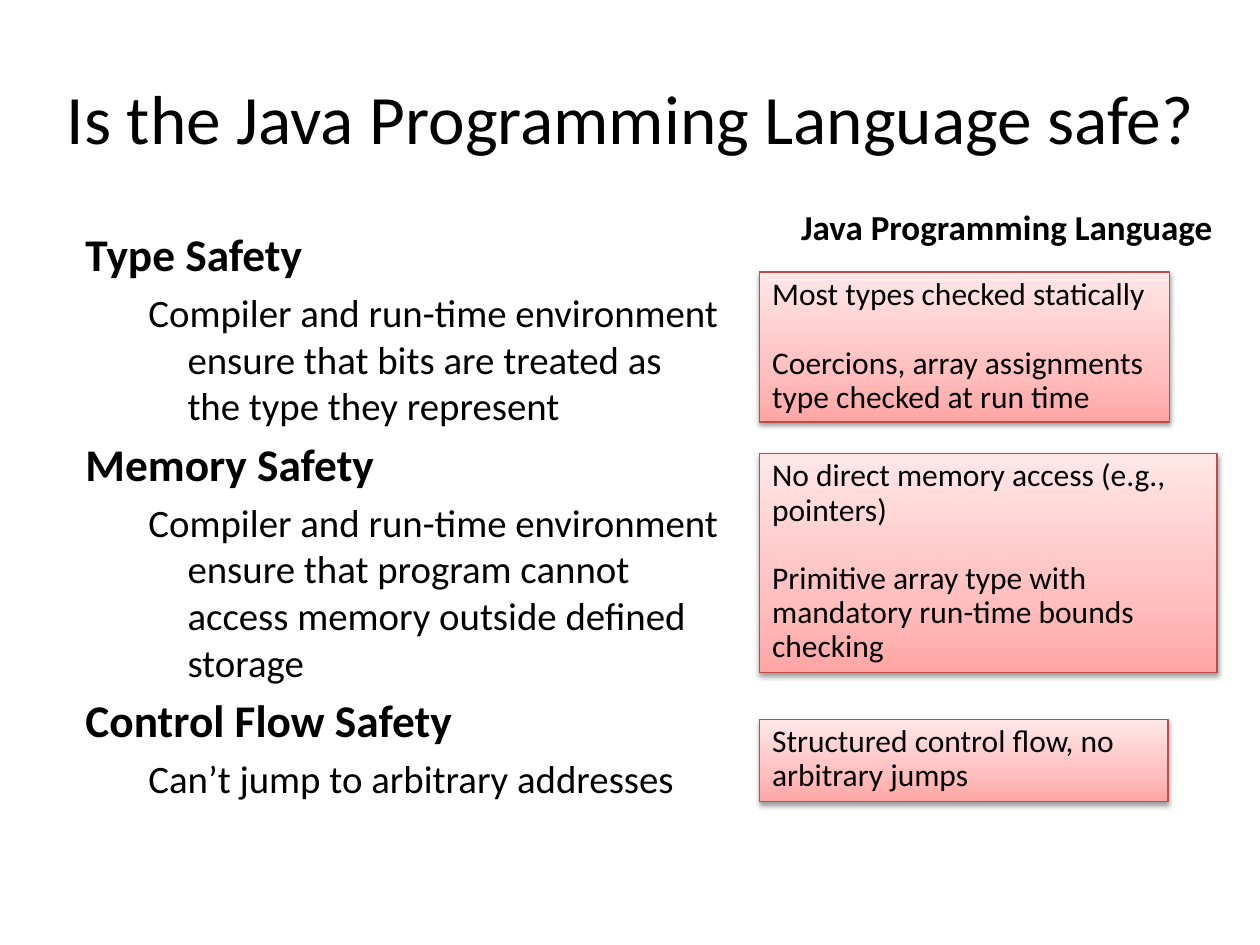
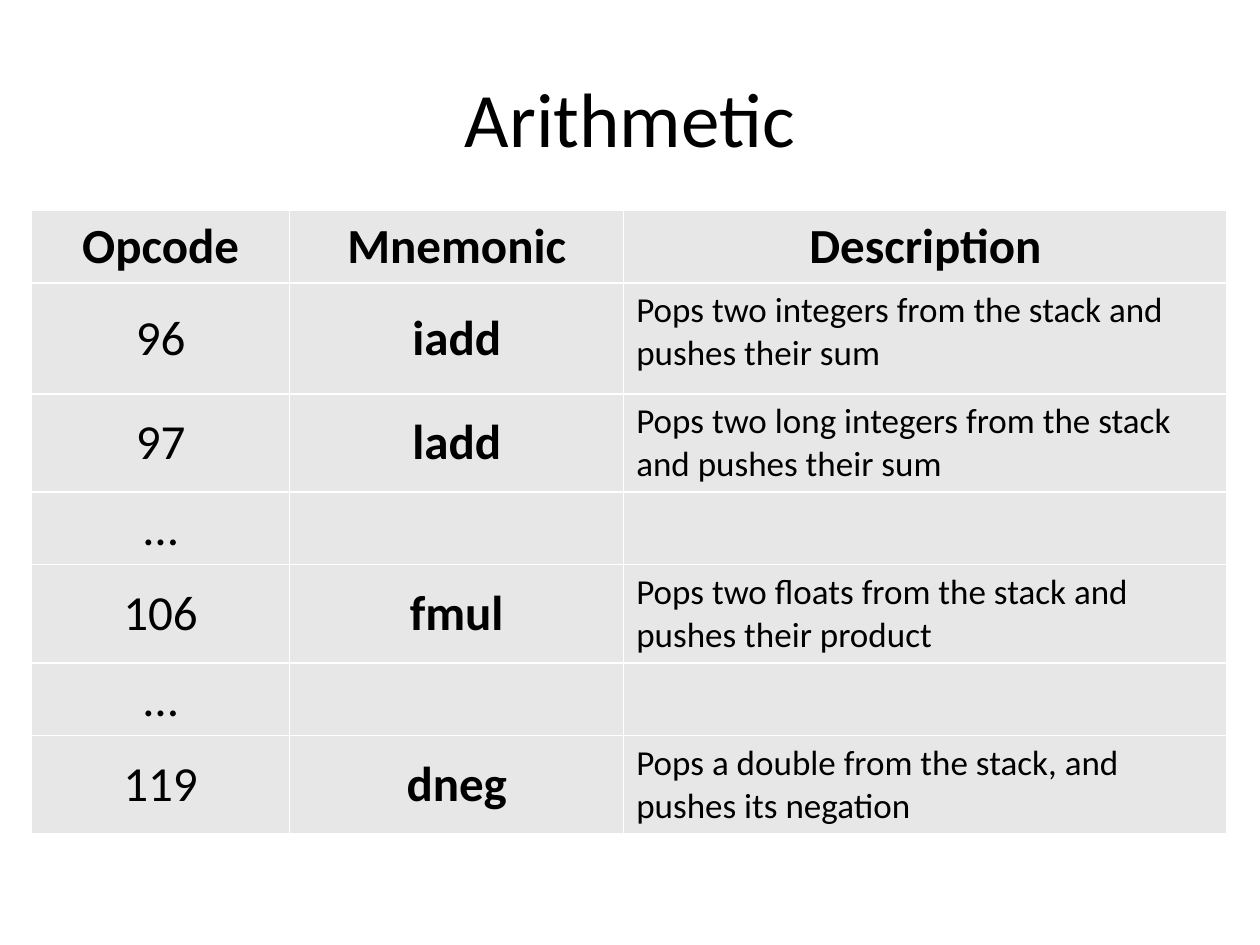
from dataclasses import dataclass

from lxml import etree
from pptx import Presentation
from pptx.dml.color import RGBColor
from pptx.enum.shapes import MSO_SHAPE
from pptx.enum.text import MSO_ANCHOR, MSO_AUTO_SIZE, PP_ALIGN
from pptx.oxml import parse_xml
from pptx.oxml.ns import nsdecls, qn
from pptx.util import Inches, Pt

RECTANGLE = MSO_SHAPE.RECTANGLE
TOP, MIDDLE, BOTTOM = MSO_ANCHOR.TOP, MSO_ANCHOR.MIDDLE, MSO_ANCHOR.BOTTOM
LEFT, CENTER = PP_ALIGN.LEFT, PP_ALIGN.CENTER
NO_FIT = MSO_AUTO_SIZE.NONE
TITLE_ONLY = 5


@dataclass(frozen=True)
class Theme:
    font: str = "Calibri"
    ink: str = "000000"
    cell_fill: str = "E7E7E7"
    cell_border: str = "FFFFFF"
    note_line: str = "BF4C48"
    note_stops: tuple = ((0, "FFA6A5"), (35, "FFC0BF"), (100, "FFE7E7"))
    title: float = 44
    title_small: float = 39.6
    heading: float = 25.9
    detail: float = 22.2
    note: float = 18
    label: float = 20
    cell: float = 28
    description: float = 20


class Deck:
    """Holds the theme and the slide being built."""

    def __init__(self, theme):
        self.theme = theme
        self.presentation = Presentation()
        self.presentation.slide_width = Inches(10)
        self.presentation.slide_height = Inches(7.5)
        self.page = None

    def style(self, para, size, bold=False, align=LEFT):
        para.alignment = align
        for span in para.runs:
            span.font.name = self.theme.font
            span.font.size = Pt(size)
            span.font.bold = bold
            span.font.color.rgb = RGBColor.from_string(self.theme.ink)

    def add_page(self, title, size, left, width):
        layout = self.presentation.slide_layouts[TITLE_ONLY]
        self.page = self.presentation.slides.add_slide(layout)
        box = self.page.shapes.title
        box.left, box.top = Inches(left), Inches(0.3)
        box.width, box.height = Inches(width), Inches(1.25)
        frame = box.text_frame
        frame.text = title
        frame.auto_size = NO_FIT
        frame.vertical_anchor = MIDDLE
        self.style(frame.paragraphs[0], size, align=CENTER)

    def add_text_box(self, left, top, width, height, text, wrap=True):
        box = self.page.shapes.add_textbox(
            Inches(left), Inches(top), Inches(width), Inches(height))
        box.text_frame.word_wrap = wrap
        box.text_frame.text = text
        return box.text_frame.paragraphs

    def add_label(self, left, top, width, height, text):
        paras = self.add_text_box(left, top, width, height, text, wrap=False)
        self.style(paras[0], self.theme.label, bold=True)

    def add_outline(self, left, top, width, height, topics):
        """Bold headings, each followed by one indented detail."""
        lines = [line for topic in topics for line in topic]
        paras = self.add_text_box(left, top, width, height, "\n".join(lines))
        for index, para in enumerate(paras):
            is_detail = index % 2 == 1
            size = self.theme.detail if is_detail else self.theme.heading
            margin, indent = (0.81, -0.31) if is_detail else (0.38, -0.38)
            self.style(para, size, bold=not is_detail)
            para.level = int(is_detail)
            para.space_before = Pt(4.4)
            properties = para._p.get_or_add_pPr()
            properties.set("marL", str(Inches(margin)))
            properties.set("indent", str(Inches(indent)))

    def add_note(self, left, top, width, height, lines):
        """Shaded, shadowed box with one paragraph per line."""
        box = self.page.shapes.add_shape(
            RECTANGLE, Inches(left), Inches(top), Inches(width), Inches(height))
        stops = "".join(
            f'<a:gs pos="{place * 1000}"><a:srgbClr val="{color}"/></a:gs>'
            for place, color in self.theme.note_stops)
        box._element.spPr.insert(2, parse_xml(
            f'<a:gradFill {nsdecls("a")} rotWithShape="1"><a:gsLst>{stops}'
            '</a:gsLst><a:lin ang="16200000" scaled="0"/></a:gradFill>'))
        box.line.color.rgb = RGBColor.from_string(self.theme.note_line)
        box.line.width = Pt(0.75)
        box.shadow.inherit = False
        box._element.spPr.find(qn("a:effectLst")).append(parse_xml(
            f'<a:outerShdw {nsdecls("a")} blurRad="{Pt(3.1)}" dist="{Pt(1.6)}" '
            'dir="5400000" rotWithShape="0"><a:srgbClr val="000000">'
            '<a:alpha val="38000"/></a:srgbClr></a:outerShdw>'))
        frame = box.text_frame
        frame.text = "\n".join(lines)
        frame.word_wrap = True
        frame.vertical_anchor = TOP
        for index, para in enumerate(frame.paragraphs):
            self.style(para, self.theme.note)
            para.line_spacing = 0.9
            if index:
                para.space_before = Pt(19.8)

    def add_border(self, cell):
        properties = cell._tc.get_or_add_tcPr()
        for side in ("a:lnL", "a:lnR", "a:lnT", "a:lnB"):
            line = etree.SubElement(properties, qn(side), w=str(Pt(1)))
            fill = etree.SubElement(line, qn("a:solidFill"))
            etree.SubElement(fill, qn("a:srgbClr"), val=self.theme.cell_border)

    def add_table(self, left, top, widths, heights, rows):
        """Header row, then code, bold name and description columns."""
        table = self.page.shapes.add_table(
            len(rows), len(widths), Inches(left), Inches(top),
            Inches(sum(widths)), Inches(sum(heights))).table
        table.first_row = table.horz_banding = False
        for column, width in zip(table.columns, widths):
            column.width = Inches(width)
        for row, height in zip(table.rows, heights):
            row.height = Inches(height)
        for row, texts in enumerate(rows):
            for column, text in enumerate(texts):
                cell = table.cell(row, column)
                is_header = row == 0
                is_description = column == 2 and not is_header
                self.add_border(cell)
                cell.fill.solid()
                cell.fill.fore_color.rgb = RGBColor.from_string(self.theme.cell_fill)
                cell.vertical_anchor = (
                    BOTTOM if is_header else TOP if is_description else MIDDLE)
                cell.text = text
                self.style(
                    cell.text_frame.paragraphs[0],
                    self.theme.description if is_description else self.theme.cell,
                    bold=is_header or column == 1,
                    align=LEFT if is_description else CENTER)


def build_safety_page(deck):
    deck.add_page("Is the Java Programming Language safe?",
                  deck.theme.title_small, 0.16, 9.69)
    deck.add_outline(0.58, 1.75, 5.25, 5.33, [
        ("Type Safety",
         "Compiler and run-time environment ensure that bits are treated as "
         "the type they represent"),
        ("Memory Safety",
         "Compiler and run-time environment ensure that program cannot access "
         "memory outside defined storage"),
        ("Control Flow Safety", "Can’t jump to arbitrary addresses"),
    ])
    # How the language meets each kind of safety
    notes = [
        (2.16, 3.25, 1.19, ["Most types checked statically",
                            "Coercions, array assignments type checked at run time"]),
        (3.6, 3.63, 1.74, ["No direct memory access (e.g., pointers)",
                           "Primitive array type with mandatory run-time bounds checking"]),
        (5.71, 3.24, 0.65, ["Structured control flow, no arbitrary jumps"]),
    ]
    for top, width, height, lines in notes:
        deck.add_note(6.03, top, width, height, lines)
    deck.add_label(6.26, 1.58, 3.5, 0.44, "Java Programming Language")


def build_arithmetic_page(deck):
    deck.add_page("Arithmetic", deck.theme.title, 0.5, 9)
    gap = ("…", "", "")
    rows = [
        ("Opcode", "Mnemonic", "Description"),
        ("96", "iadd", "Pops two integers from the stack and pushes their sum"),
        ("97", "ladd", "Pops two long integers from the stack and pushes their sum"),
        gap,
        ("106", "fmul", "Pops two floats from the stack and pushes their product"),
        gap,
        ("119", "dneg", "Pops a double from the stack, and pushes its negation"),
    ]
    short, tall = 0.57, 0.78
    heights = [short, 0.88, tall, short, tall, short, tall]
    deck.add_table(0.25, 1.67, [2.05, 2.65, 4.79], heights, rows)


def main():
    deck = Deck(Theme())
    build_safety_page(deck)
    build_arithmetic_page(deck)
    deck.presentation.save("out.pptx")


if __name__ == "__main__":
    main()
